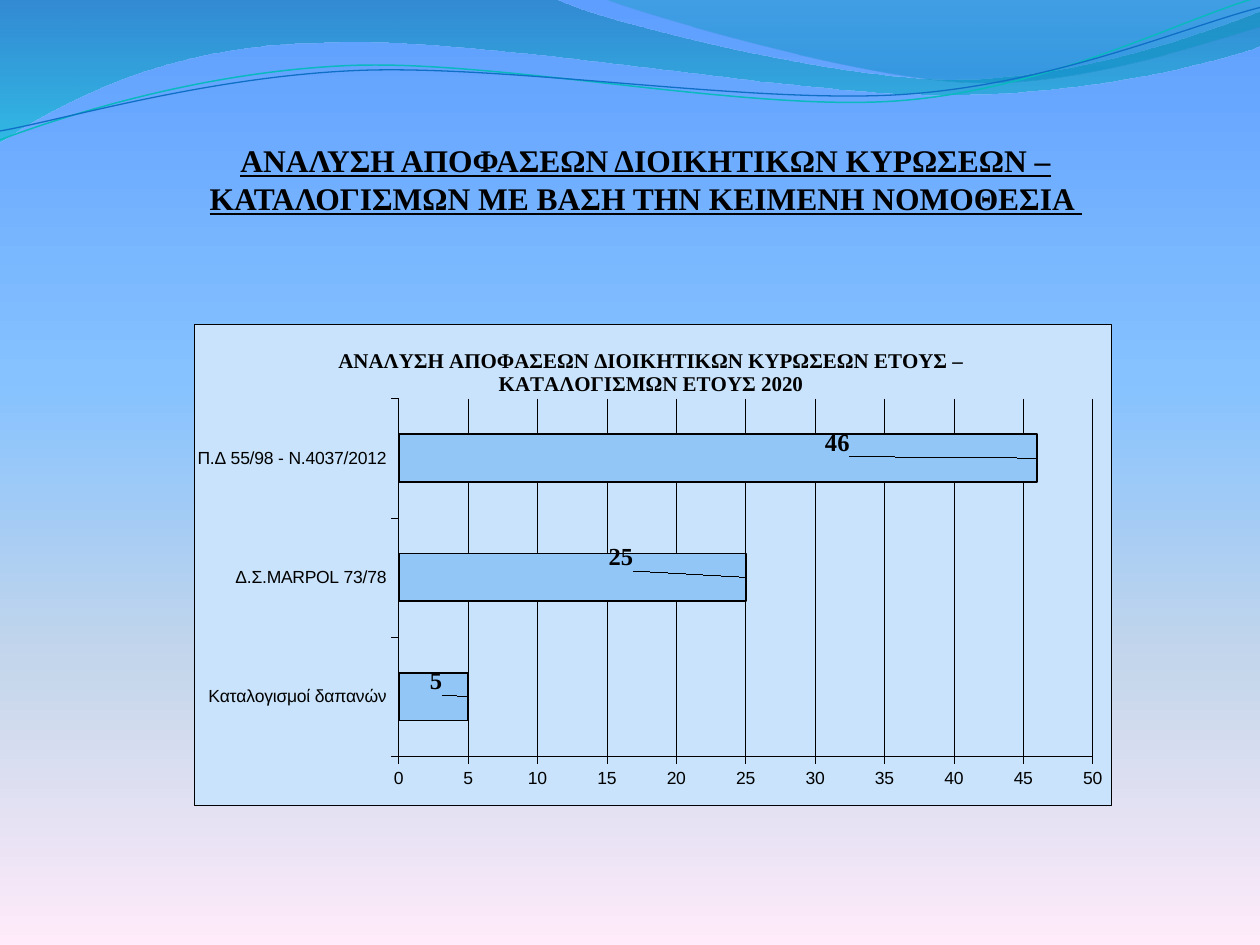
from dataclasses import dataclass
from math import cos, radians, sin

from lxml import etree
from pptx import Presentation
from pptx.chart.data import CategoryChartData
from pptx.dml.color import RGBColor
from pptx.enum.chart import XL_CHART_TYPE, XL_LABEL_POSITION, XL_TICK_LABEL_POSITION, XL_TICK_MARK
from pptx.enum.text import MSO_ANCHOR, PP_ALIGN
from pptx.oxml import parse_xml
from pptx.oxml.ns import qn
from pptx.util import Cm, Pt

BAR = XL_CHART_TYPE.BAR_CLUSTERED
OUTSIDE_END = XL_LABEL_POSITION.OUTSIDE_END
LOW = XL_TICK_LABEL_POSITION.LOW
OUTWARD, NO_TICK = XL_TICK_MARK.OUTSIDE, XL_TICK_MARK.NONE
BOTTOM, CENTER = MSO_ANCHOR.BOTTOM, PP_ALIGN.CENTER
CM_PER_INCH = 2.54
RIBBON_TILT = -2.7
DRAWING_NS = "http://schemas.openxmlformats.org/drawingml/2006/main"
CHART_NS = "http://schemas.openxmlformats.org/drawingml/2006/chart"


@dataclass(frozen=True)
class Theme:
    serif: str = "Times New Roman"
    sans: str = "Arial"
    ink: str = "000000"
    panel: str = "C8E3FB"
    bar: str = "91C6F7"
    teal_line: str = "0AB8BF"
    blue_line: str = "0F6FC6"
    sky: tuple = ((0, "5E9EFF", 100), (40, "85C2FF", 100), (70, "C4D6EB", 100), (100, "FFEBFA", 100))
    wide_wave: tuple = ((0, "0074A1", 45), (100, "00C6CF", 55))
    right_wave: tuple = ((0, "00A1A9", 30), (80, "008BBF", 45))
    heading: int = 18
    chart_title: int = 12
    value: int = 14
    axis: int = 10
    hairline: float = 0.25


def inches(value):
    return Cm(value * CM_PER_INCH)


def turned(points, center, degrees):
    angle, (cx, cy) = radians(degrees), center
    return [(cx + (x - cx) * cos(angle) - (y - cy) * sin(angle),
             cy + (x - cx) * sin(angle) + (y - cy) * cos(angle)) for x, y in points]


def manual_layout(x, y, extra="", size=""):
    return parse_xml(f'<c:layout xmlns:c="{CHART_NS}"><c:manualLayout>{extra}'
                     f'<c:x val="{x / 100}"/><c:y val="{y / 100}"/>{size}'
                     '</c:manualLayout></c:layout>')


def edge_layout(x, y, size="", target=""):
    return manual_layout(x, y, target + '<c:xMode val="edge"/><c:yMode val="edge"/>', size)


class SlideBuilder:
    def __init__(self, page, theme):
        self.page = page
        self.theme = theme

    def style_font(self, font, name, size, bold=False):
        font.name, font.size, font.bold = name, Pt(size), bold
        font.color.rgb = RGBColor.from_string(self.theme.ink)

    def style_line(self, line, color, width):
        line.color.rgb = RGBColor.from_string(color)
        line.width = Pt(width)

    def gradient(self, fill, element, stops):
        fill.gradient()
        fill.gradient_angle = 270
        stop_list = element.find(".//" + qn("a:gsLst"))
        for old_stop in list(stop_list):
            stop_list.remove(old_stop)
        for position, color, opacity in stops:
            stop_list.append(parse_xml(
                f'<a:gs xmlns:a="{DRAWING_NS}" pos="{position * 1000}"><a:srgbClr val="{color}">'
                f'<a:alpha val="{opacity * 1000}"/></a:srgbClr></a:gs>'))

    def background(self, stops):
        self.gradient(self.page.background.fill, self.page.element, stops)

    def outline(self, points, curve_starts, closed):
        scaled = [(inches(x), inches(y)) for x, y in points]
        builder = self.page.shapes.build_freeform(*scaled[0])
        builder.add_line_segments(scaled[1:], close=closed)
        shape = builder.convert_to_shape()
        shape.shadow.inherit = False
        segments = shape.element.findall(".//" + qn("a:lnTo"))
        for start in curve_starts:
            curve = etree.Element(qn("a:cubicBezTo"))
            segments[start].addprevious(curve)
            for segment in segments[start:start + 3]:
                curve.append(segment[0])
                segment.getparent().remove(segment)
        return shape

    def wave(self, points, curve_starts, stops):
        shape = self.outline(points, curve_starts, True)
        self.gradient(shape.fill, shape.element, stops)
        shape.line.fill.background()

    def ribbon(self, points, center, color, width):
        shape = self.outline(turned(points, center, -RIBBON_TILT), (0, 3, 6), False)
        shape.rotation = RIBBON_TILT
        shape.fill.background()
        self.style_line(shape.line, color, width)

    def heading(self, text, left, top, width, height):
        box = self.page.shapes.add_textbox(*map(inches, (left, top, width, height)))
        frame = box.text_frame
        frame.word_wrap = True
        frame.vertical_anchor = BOTTOM
        frame.margin_left = frame.margin_right = frame.margin_bottom = 0
        frame.margin_top = inches(0.05)
        para = frame.paragraphs[0]
        para.text = text
        para.alignment = CENTER
        self.style_font(para.font, self.theme.serif, self.theme.heading, True)
        para.font.underline = True

    def bar_chart(self, title, rows, left, top, width, height):
        theme = self.theme
        data = CategoryChartData()
        data.categories = [name for name, _, _ in rows]
        data.add_series("Series 1", [value for _, value, _ in rows])
        chart = self.page.shapes.add_chart(
            BAR, *map(inches, (left, top, width, height)), data).chart
        chart.has_legend = False
        self.style_font(chart.font, theme.sans, theme.axis)
        self.chart_panel(chart)

        para = chart.chart_title.text_frame.paragraphs[0]
        para.text = title
        self.style_font(para.font, theme.serif, theme.chart_title, True)
        for old_layout in chart.element.findall(".//" + qn("c:layout")):
            old_layout.getparent().remove(old_layout)
        chart.element.find(".//" + qn("c:tx")).addnext(edge_layout(15.3, 4.2))
        chart.element.find(".//" + qn("c:plotArea")).insert(0, edge_layout(
            22.3, 15.5, '<c:w val="0.757"/><c:h val="0.744"/>', '<c:layoutTarget val="inner"/>'))

        for axis in (chart.category_axis, chart.value_axis):
            axis.major_tick_mark, axis.minor_tick_mark = OUTWARD, NO_TICK
            self.style_font(axis.tick_labels.font, theme.sans, theme.axis)
            self.style_line(axis.format.line, theme.ink, theme.hairline)
        chart.category_axis.tick_label_position = LOW
        values = chart.value_axis
        values.minimum_scale, values.maximum_scale, values.major_unit = 0, 50, 5
        self.style_line(values.major_gridlines.format.line, theme.ink, theme.hairline)

        plot = chart.plots[0]
        plot.gap_width = 150
        plot.vary_by_categories = False
        series = plot.series[0]
        series.format.fill.solid()
        series.format.fill.fore_color.rgb = RGBColor.from_string(theme.bar)
        self.style_line(series.format.line, theme.ink, 1)
        self.value_labels(series, [offset for _, _, offset in rows])

    def value_labels(self, series, offsets):
        labels = series.data_labels
        labels.show_value = True
        self.style_font(labels.font, self.theme.serif, self.theme.value, True)
        for index, offset in enumerate(offsets):
            label = series.points[index].data_label
            self.style_font(label.font, self.theme.serif, self.theme.value, True)
            label.position = OUTSIDE_END
        group = labels._element
        for entry, offset in zip(group.findall(qn("c:dLbl")), offsets):
            entry.insert(1, manual_layout(*offset))
        for leader in group.findall(qn("c:showLeaderLines")):
            group.remove(leader)
        group.append(parse_xml(
            f'<c:extLst xmlns:c="{CHART_NS}"><c:ext uri="{{CE6537A1-D6FC-4f65-9D91-7224C49458BB}}" '
            'xmlns:c15="http://schemas.microsoft.com/office/drawing/2012/chart">'
            '<c15:showLeaderLines val="0"/></c:ext></c:extLst>'))

    def chart_panel(self, chart):
        panel = parse_xml(
            f'<c:spPr xmlns:c="{CHART_NS}" xmlns:a="{DRAWING_NS}">'
            f'<a:solidFill><a:srgbClr val="{self.theme.panel}"/></a:solidFill>'
            f'<a:ln w="{Pt(self.theme.hairline)}"><a:solidFill>'
            f'<a:srgbClr val="{self.theme.ink}"/></a:solidFill></a:ln></c:spPr>')
        chart.element.find(qn("c:chart")).addnext(panel)


def main():
    theme = Theme()
    deck = Presentation()
    deck.slide_width, deck.slide_height = inches(10), inches(7.5)
    slide = SlideBuilder(deck.slides.add_slide(deck.slide_layouts[6]), theme)
    slide.background(theme.sky)
    slide.wave([(0, -0.01), (4.4, -0.01), (4.76, 0.17), (6.64, 0.63), (7.58, 0.63),
                (8.53, 0.63), (9.58, 0.26), (10, 0.09), (10.01, 0.36),
                (9.83, 0.44), (8.7, 0.76), (7.46, 0.75), (6.22, 0.75), (3.82, 0.28), (2.57, 0.34),
                (1.29, 0.35), (0.46, 0.83), (-0.01, 1.13)], (1, 4, 8, 11, 14), theme.wide_wave)
    slide.wave([(4.79, -0.01), (5.09, 0.11), (6.82, 0.62), (7.69, 0.65),
                (8.56, 0.69), (9.61, 0.32), (10, 0.21), (10, 0)], (0, 3), theme.right_wave)
    slide.ribbon([(0, 1.11), (0.48, 0.93), (1.58, 0.57), (2.77, 0.52), (3.95, 0.47),
                  (5.93, 0.89), (7.13, 0.8), (8.33, 0.71), (9.38, 0.15), (9.98, -0.02)],
                 (4.99, 0.57), theme.teal_line, 0.85)
    slide.ribbon([(0, 1.04), (0.47, 0.96), (1.64, 0.61), (2.83, 0.56), (4.03, 0.51),
                  (5.97, 0.83), (7.17, 0.75), (8.36, 0.67), (9.41, 0.21), (10, 0.06)],
                 (5, 0.59), theme.blue_line, 0.75)
    slide.heading("ΑΝΑΛΥΣΗ ΑΠΟΦΑΣΕΩΝ ΔΙΟΙΚΗΤΙΚΩΝ ΚΥΡΩΣΕΩΝ – ΚΑΤΑΛΟΓΙΣΜΩΝ ΜΕ ΒΑΣΗ "
                  "ΤΗΝ ΚΕΙΜΕΝΗ ΝΟΜΟΘΕΣΙΑ ", 0.91, 0.77, 8.43, 0.95)
    slide.bar_chart("ΑΝΑΛΥΣΗ ΑΠΟΦΑΣΕΩΝ ΔΙΟΙΚΗΤΙΚΩΝ ΚΥΡΩΣΕΩΝ ΕΤΟΥΣ – ΚΑΤΑΛΟΓΙΣΜΩΝ ΕΤΟΥΣ 2020",
                    [("Καταλογισμοί δαπανών", 5, (-4.7, -3.2)),
                     ("Δ.Σ.MARPOL 73/78", 25, (-15.5, -4.2)),
                     ("Π.Δ 55/98 - N.4037/2012", 46, (-23.7, -3.2))],
                    1.54, 2.57, 7.28, 3.82)
    deck.save("out.pptx")


if __name__ == "__main__":
    main()
